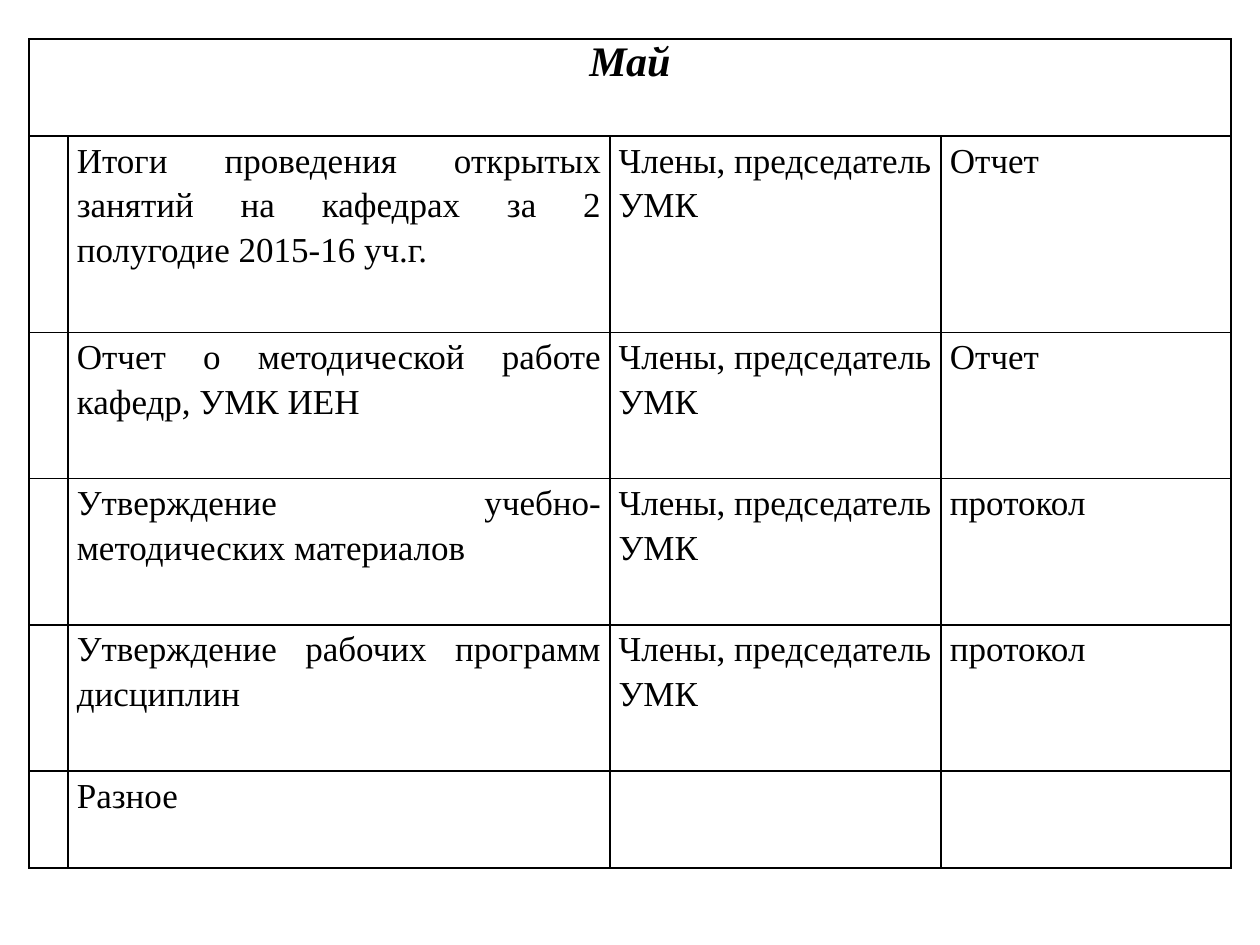
from lxml import etree
from pptx import Presentation
from pptx.dml.color import RGBColor
from pptx.enum.text import PP_ALIGN
from pptx.oxml.ns import qn
from pptx.util import Inches, Pt

BLACK = RGBColor(0, 0, 0)
LEFT, CENTER, JUSTIFY = PP_ALIGN.LEFT, PP_ALIGN.CENTER, PP_ALIGN.JUSTIFY

HEADING = {"size": Pt(24), "bold": True, "italic": True}
BODY = {"size": Pt(20), "bold": False, "italic": False}

MEMBERS = "Члены, председатель УМК"
PLAN = [
    ("Итоги проведения открытых занятий на кафедрах за 2 полугодие 2015-16 уч.г.",
     MEMBERS, "Отчет"),
    ("Отчет о методической работе кафедр, УМК ИЕН", MEMBERS, "Отчет"),
    ("Утверждение учебно-методических материалов", MEMBERS, "протокол"),
    ("Утверждение рабочих программ дисциплин", MEMBERS, "протокол"),
    ("Разное", "", ""),
]
COL_WIDTHS = [0.31, 4.3, 2.63, 2.3]
ROW_HEIGHTS = [0.77, 1.56, 1.16, 1.16, 1.16, 0.77]


class SlideBuilder:
    def __init__(self, slide):
        self.slide = slide
        self.font = {"name": "Times New Roman"}
        self.color = BLACK
        self.border = Pt(1)

    def table(self, x, y, widths, heights):
        frame = self.slide.shapes.add_table(
            len(heights), len(widths), Inches(x), Inches(y),
            Inches(sum(widths)), Inches(sum(heights)))
        table = frame.table
        table.first_row = table.horz_banding = False
        for column, width in zip(table.columns, widths):
            column.width = Inches(width)
        for row, height in zip(table.rows, heights):
            row.height = Inches(height)
        for cell in table.iter_cells():
            cell.fill.background()
            self.borders(cell)
        return table

    def borders(self, cell):
        tcPr = cell._tc.get_or_add_tcPr()
        # Border lines come before the fill
        for i, side in enumerate(("a:lnL", "a:lnR", "a:lnT", "a:lnB")):
            ln = etree.Element(qn(side), w=str(self.border))
            fill = etree.SubElement(ln, qn("a:solidFill"))
            etree.SubElement(fill, qn("a:srgbClr"), val=str(self.color))
            tcPr.insert(i, ln)

    def text(self, cell, text, style, align, margin, spacing=1.0):
        cell.margin_left = cell.margin_right = Inches(margin)
        cell.margin_top = cell.margin_bottom = 0
        p = cell.text_frame.paragraphs[0]
        p.alignment, p.line_spacing = align, spacing
        r = p.add_run()
        r.text = text
        for name, value in {**self.font, **style}.items():
            setattr(r.font, name, value)
        r.font.color.rgb = self.color


def main():
    prs = Presentation()
    prs.slide_width, prs.slide_height = Inches(10), Inches(7.5)
    s = SlideBuilder(prs.slides.add_slide(prs.slide_layouts[6]))
    table = s.table(0.23, 0.31, COL_WIDTHS, ROW_HEIGHTS)

    # Month heading across all columns
    table.cell(0, 0).merge(table.cell(0, len(COL_WIDTHS) - 1))
    s.text(table.cell(0, 0), "Май", HEADING, CENTER, 0.05)

    # Plan: topic, people responsible, resulting document
    for row, entry in enumerate(PLAN, 1):
        for col, (text, align) in enumerate(zip(entry, (JUSTIFY, LEFT, JUSTIFY)), 1):
            if text:
                s.text(table.cell(row, col), text, BODY, align, 0.07, 1.15)

    prs.save("out.pptx")


if __name__ == "__main__":
    main()
